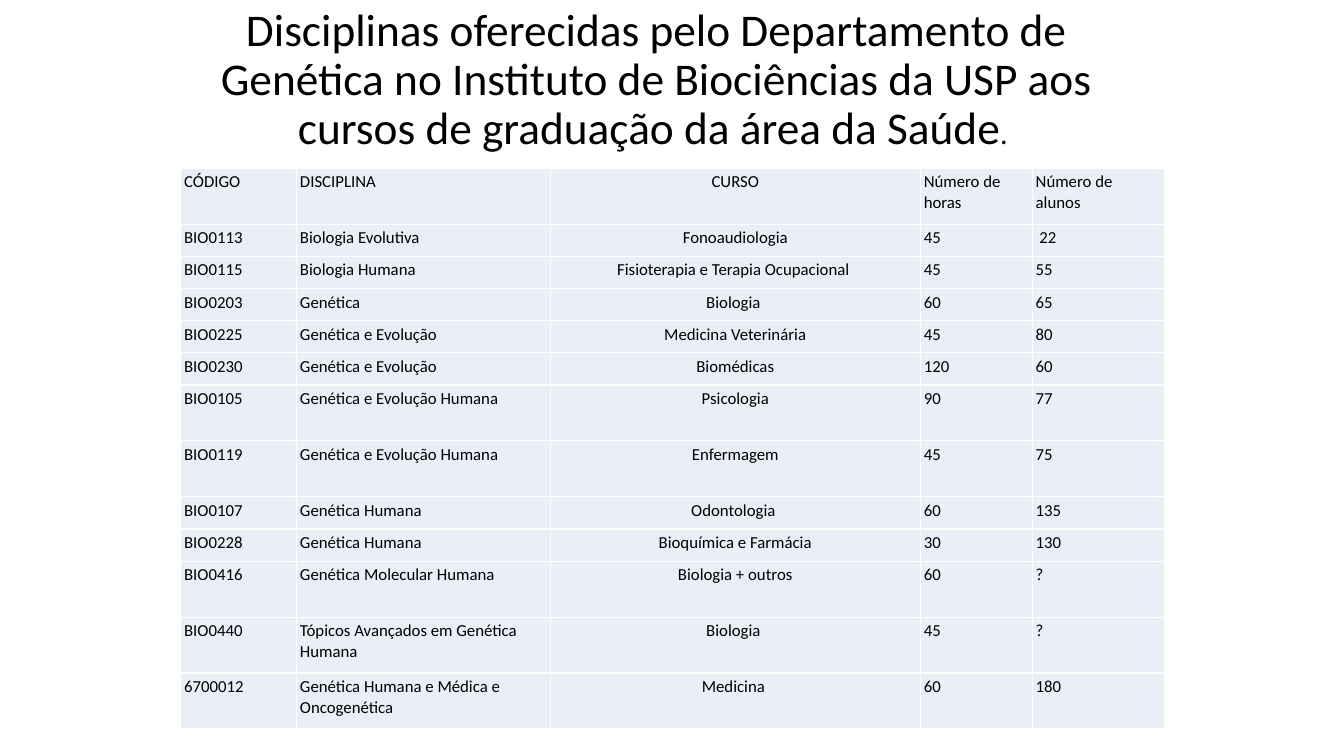
from lxml import etree
from pptx import Presentation
from pptx.dml.color import RGBColor
from pptx.enum.text import MSO_ANCHOR, MSO_AUTO_SIZE, PP_ALIGN
from pptx.oxml.ns import qn
from pptx.util import Cm, Pt

CENTER, LEFT = PP_ALIGN.CENTER, PP_ALIGN.LEFT
BOTTOM = MSO_ANCHOR.BOTTOM
NO_AUTOFIT = MSO_AUTO_SIZE.NONE

THEME = {
    "font": "Calibri",
    "ink": RGBColor(0, 0, 0),
    "cell": RGBColor(0xEA, 0xEF, 0xF7),
    "border": "FFFFFF",
    "border_width": Pt(1),
    "title": Pt(32.4),
    "title_end": Pt(21.6),
    "body": Pt(12),
}

COURSES = [
    ("CÓDIGO", "DISCIPLINA", "CURSO", "Número de horas", "Número de alunos"),
    ("BIO0113", "Biologia Evolutiva", "Fonoaudiologia", "45", " 22"),
    ("BIO0115", "Biologia Humana", "Fisioterapia e Terapia Ocupacional ", "45", "55"),
    ("BIO0203", "Genética", "Biologia ", "60", "65"),
    ("BIO0225", "Genética e Evolução", "Medicina Veterinária", "45", "80"),
    ("BIO0230", "Genética e Evolução", "Biomédicas", "120", "60"),
    ("BIO0105", "Genética e Evolução Humana", "Psicologia", "90", "77"),
    ("BIO0119", "Genética e Evolução Humana", "Enfermagem", "45", "75"),
    ("BIO0107", "Genética Humana", "Odontologia ", "60", "135"),
    ("BIO0228", "Genética Humana", "Bioquímica e Farmácia", "30", "130"),
    ("BIO0416", "Genética Molecular Humana", "Biologia + outros", "60", "?"),
    ("BIO0440", "Tópicos Avançados em Genética Humana", "Biologia ", "45", "?"),
    ("6700012", "Genética Humana e Médica e Oncogenética", "Medicina ", "60", "180"),
]
COLUMN_WIDTHS = [Cm(2.92), Cm(6.4), Cm(9.32), Cm(2.82), Cm(3.33)]
COURSE_COLUMN = 2
TALL_ROWS = {0, 6, 7, 10, 11, 12}
TALL, SHORT = Cm(1.41), Cm(0.81)
ROW_HEIGHTS = [TALL if i in TALL_ROWS else SHORT for i in range(len(COURSES))]
CELL_INSET = Cm(0.09)


def add_borders(cell):
    properties = cell._tc.get_or_add_tcPr()
    for side in ("a:lnL", "a:lnR", "a:lnT", "a:lnB"):
        line = etree.SubElement(properties, qn(side), w=str(THEME["border_width"]))
        fill = etree.SubElement(line, qn("a:solidFill"))
        etree.SubElement(fill, qn("a:srgbClr"), val=THEME["border"])


prs = Presentation()
prs.slide_width, prs.slide_height = Cm(33.87), Cm(19.05)
slide = prs.slides.add_slide(prs.slide_layouts[6])

title = slide.shapes.add_textbox(Cm(4.78), Cm(1.7), Cm(23.52), Cm(2.31)).text_frame
title.word_wrap = True
title.auto_size = NO_AUTOFIT
title.vertical_anchor = BOTTOM
heading = title.paragraphs[0]
heading.alignment = CENTER
heading.line_spacing = 0.9
heading.font.name = THEME["font"]
heading.font.color.rgb = THEME["ink"]
for words, size in (
    ("Disciplinas oferecidas pelo Departamento de Genética no Instituto de "
     "Biociências da USP aos cursos de graduação da área da Saúde", THEME["title"]),
    (". ", THEME["title_end"]),
):
    run = heading.add_run()
    run.text = words
    run.font.size = size

courses = slide.shapes.add_table(
    len(COURSES), len(COLUMN_WIDTHS), Cm(4.55), Cm(4.24),
    sum(COLUMN_WIDTHS), sum(ROW_HEIGHTS),
).table
courses.first_row = False
courses.horz_banding = False
for column, width in zip(courses.columns, COLUMN_WIDTHS):
    column.width = width
for row, height, entries in zip(courses.rows, ROW_HEIGHTS, COURSES):
    row.height = height
    for index, (cell, entry) in enumerate(zip(row.cells, entries)):
        cell.margin_left = cell.margin_right = CELL_INSET
        cell.margin_top = cell.margin_bottom = CELL_INSET
        add_borders(cell)
        cell.fill.solid()
        cell.fill.fore_color.rgb = THEME["cell"]
        cell.text = entry
        paragraph = cell.text_frame.paragraphs[0]
        paragraph.alignment = CENTER if index == COURSE_COLUMN else LEFT
        paragraph.font.name = THEME["font"]
        paragraph.font.size = THEME["body"]
        paragraph.font.color.rgb = THEME["ink"]

prs.save("out.pptx")
